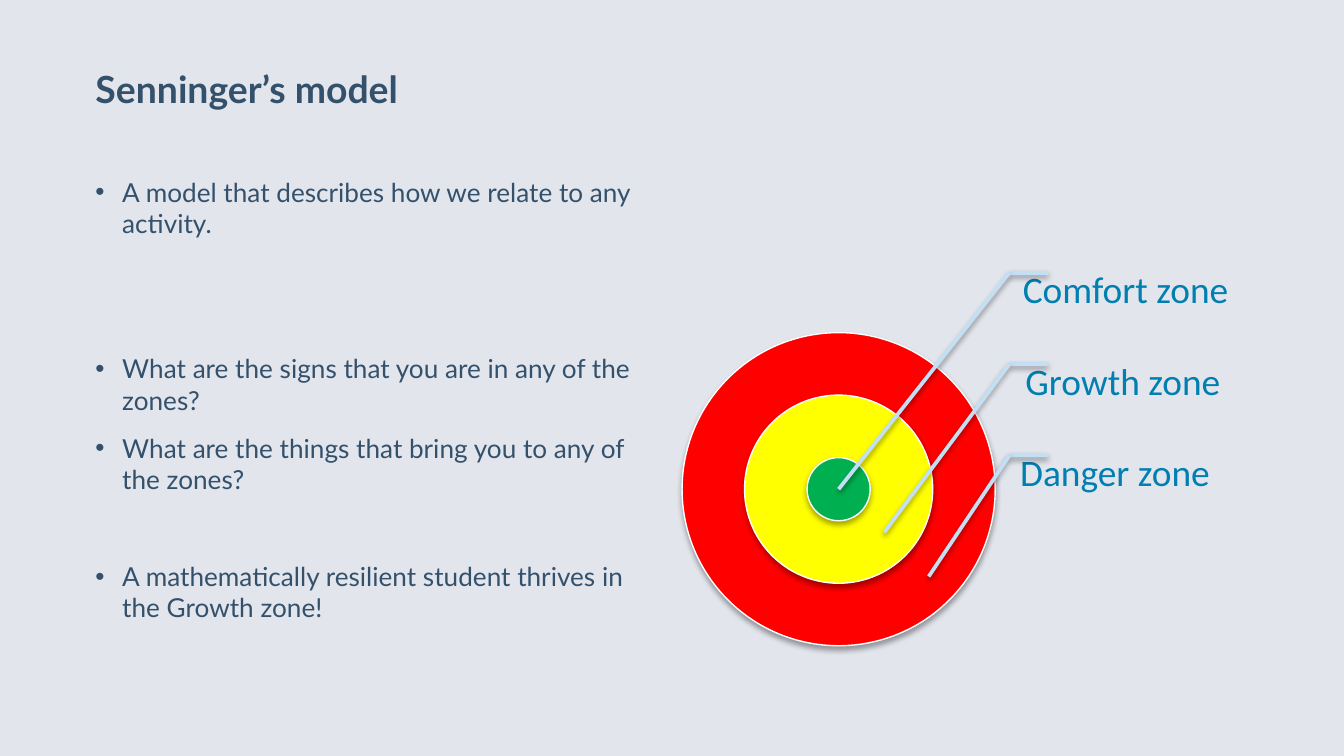
from typing import NamedTuple

from lxml import etree
from pptx import Presentation
from pptx.dml.color import RGBColor
from pptx.enum.shapes import MSO_CONNECTOR as CONNECTOR, MSO_SHAPE as SHAPE
from pptx.enum.text import MSO_ANCHOR as ANCHOR
from pptx.oxml.ns import qn
from pptx.util import Inches, Pt

BACKGROUND = RGBColor(0xE3, 0xE5, 0xED)
SLATE = RGBColor(0x34, 0x51, 0x6C)
LABEL_BLUE = RGBColor(0x00, 0x7F, 0xB0)
LEADER_BLUE = RGBColor(0xC3, 0xDF, 0xF4)
OUTLINE = RGBColor(0xFE, 0xFF, 0xFF)
RED = RGBColor(0xFF, 0x00, 0x00)
YELLOW = RGBColor(0xFF, 0xFF, 0x00)
GREEN = RGBColor(0x00, 0xB0, 0x50)

TITLE_FONT = {"name": "Lato", "size": Pt(20), "bold": True}
BODY_FONT = {"name": "Lato", "size": Pt(14)}
LABEL_FONT = {"name": "Calibri", "size": Pt(20)}

SLIDE_WIDTH = 10
SLIDE_HEIGHT = SLIDE_WIDTH * 9 / 16
CENTER_X, CENTER_Y = 6.24, 3.64
ELBOW_X, LEADER_END_X = 7.51, 7.8
FIRST_LEADER_Y, LABEL_STEP = 2.03, 0.68


class Bullet(NamedTuple):
    text: str
    space_before: float


class Ring(NamedTuple):
    diameter: float
    color: RGBColor


class Zone(NamedTuple):
    label: str
    left: float
    width: float
    target_x: float
    target_y: float


BULLETS = [
    Bullet("A model that describes how we relate to any activity.", 0),
    Bullet("What are the signs that you are in any of the zones?", 61),
    Bullet("What are the things that bring you to any of the zones?", 9),
    Bullet("A mathematically resilient student thrives in the Growth zone!", 35),
]
RINGS = [Ring(2.33, RED), Ring(1.4, YELLOW), Ring(0.47, GREEN)]
ZONES = [
    Zone("Comfort zone", 7.46, 1.85, CENTER_X, CENTER_Y),
    Zone("Growth zone", 7.48, 1.81, 6.58, 3.96),
    Zone("Danger zone", 7.44, 1.84, 6.91, 4.29),
]


def add_shadow(sp, distance: float, alpha: int) -> None:
    """Give a shape or connector a soft black shadow that falls straight down."""
    effects = etree.SubElement(sp._element.spPr, qn("a:effectLst"))
    shadow = etree.SubElement(
        effects, qn("a:outerShdw"), blurRad=str(Pt(3.1)), dist=str(Pt(distance)),
        dir="5400000", rotWithShape="0")
    color = etree.SubElement(shadow, qn("a:srgbClr"), val="000000")
    etree.SubElement(color, qn("a:alpha"), val=str(alpha * 1000))


def add_text_frame(s, left: float, top: float, width: float, height: float,
                   anchor, insets=(0, 0, 0, 0)):
    tf = s.shapes.add_textbox(
        Inches(left), Inches(top), Inches(width), Inches(height)).text_frame
    tf.word_wrap = True
    tf.vertical_anchor = anchor
    sides = ("margin_left", "margin_top", "margin_right", "margin_bottom")
    for side, inset in zip(sides, insets):
        setattr(tf, side, Inches(inset))
    return tf


def write(p, text: str, font: dict, color: RGBColor) -> None:
    r = p.add_run()
    r.text = text
    for name, value in font.items():
        setattr(r.font, name, value)
    r.font.color.rgb = color


def add_bullets(s, bullets: list[Bullet]) -> None:
    tf = add_text_frame(s, 0.71, 1.31, 4.16, 3.71, ANCHOR.TOP)
    for i, bullet in enumerate(bullets):
        p = tf.add_paragraph() if i else tf.paragraphs[0]
        pPr = p._p.get_or_add_pPr()
        pPr.set("marL", str(Inches(0.2)))
        pPr.set("indent", str(Inches(-0.2)))
        etree.SubElement(pPr, qn("a:buFont"), typeface="Arial")
        etree.SubElement(pPr, qn("a:buChar"), char="•")
        if bullet.space_before:
            p.space_before = Pt(bullet.space_before)
        write(p, bullet.text, BODY_FONT, SLATE)


def add_ring(s, ring: Ring) -> None:
    radius = ring.diameter / 2
    size = Inches(ring.diameter)
    sp = s.shapes.add_shape(SHAPE.OVAL, Inches(CENTER_X - radius),
                            Inches(CENTER_Y - radius), size, size)
    sp.fill.solid()
    sp.fill.fore_color.rgb = ring.color
    sp.line.color.rgb = OUTLINE
    sp.line.width = Pt(0.75)
    add_shadow(sp, 1.8, 35)


def add_leader(s, y: float, end_x: float, end_y: float) -> None:
    line = s.shapes.add_connector(CONNECTOR.STRAIGHT, Inches(ELBOW_X), Inches(y),
                                  Inches(end_x), Inches(end_y))
    line.line.color.rgb = LEADER_BLUE
    line.line.width = Pt(2)
    add_shadow(line, 1.6, 38)


def add_zone(s, zone: Zone, y: float) -> None:
    """Draw a zone's label and the bent leader whose elbow is at height y."""
    tf = add_text_frame(s, zone.left, y - 0.2, zone.width, LABEL_STEP,
                        ANCHOR.MIDDLE, (0.15, 0.03, 0.03, 0.03))
    p = tf.paragraphs[0]
    p.line_spacing = 0.9
    write(p, zone.label, LABEL_FONT, LABEL_BLUE)
    add_leader(s, y, LEADER_END_X, y)
    add_leader(s, y, zone.target_x, zone.target_y)


def main() -> None:
    prs = Presentation()
    prs.slide_width, prs.slide_height = Inches(SLIDE_WIDTH), Inches(SLIDE_HEIGHT)
    s = prs.slides.add_slide(prs.slide_layouts[6])
    s.background.fill.solid()
    s.background.fill.fore_color.rgb = BACKGROUND

    title = add_text_frame(s, 0.71, 0.13, 6.98, 0.7, ANCHOR.BOTTOM).paragraphs[0]
    title.line_spacing = 0.9
    write(title, "Senninger’s model", TITLE_FONT, SLATE)
    add_bullets(s, BULLETS)
    for ring in RINGS:
        add_ring(s, ring)
    for i, zone in enumerate(ZONES):
        add_zone(s, zone, FIRST_LEADER_Y + i * LABEL_STEP)

    prs.save("out.pptx")


if __name__ == "__main__":
    main()
